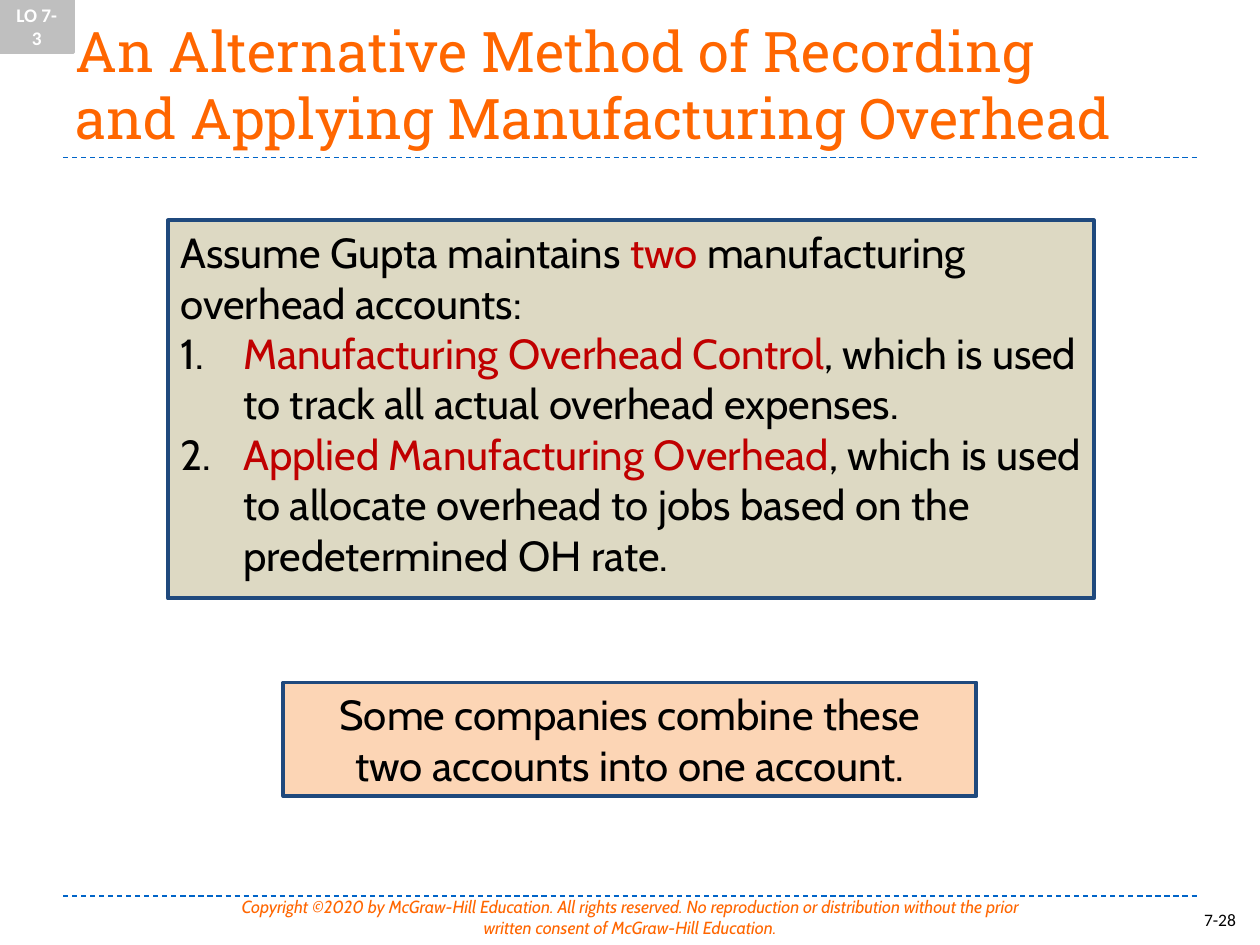
from dataclasses import dataclass

from lxml import etree
from pptx import Presentation
from pptx.dml.color import RGBColor
from pptx.enum.dml import MSO_LINE
from pptx.enum.shapes import MSO_CONNECTOR, MSO_SHAPE
from pptx.enum.text import MSO_ANCHOR, MSO_AUTO_SIZE, PP_ALIGN
from pptx.oxml.ns import qn
from pptx.slide import Slide
from pptx.util import Pt

LEFT, CENTER = PP_ALIGN.LEFT, PP_ALIGN.CENTER
TOP, MIDDLE, BOTTOM = MSO_ANCHOR.TOP, MSO_ANCHOR.MIDDLE, MSO_ANCHOR.BOTTOM
RECTANGLE, STRAIGHT, DASH = MSO_SHAPE.RECTANGLE, MSO_CONNECTOR.STRAIGHT, MSO_LINE.DASH
NO_AUTOFIT = MSO_AUTO_SIZE.NONE

ORANGE = RGBColor(0xFF, 0x66, 0x00)
BLUE = RGBColor(0x00, 0x64, 0xC8)
NAVY = RGBColor(0x1F, 0x49, 0x7D)
TAN = RGBColor(0xDD, 0xD9, 0xC3)
PEACH = RGBColor(0xFC, 0xD5, 0xB5)
GRAY = RGBColor(0xBF, 0xBF, 0xBF)
RED = RGBColor(0xC0, 0x00, 0x00)
BLACK = RGBColor(0x00, 0x00, 0x00)
WHITE = RGBColor(0xFF, 0xFF, 0xFF)


@dataclass
class SlideBuilder:
    slide: Slide
    body_font: str = "Cabin"
    title_font: str = "Roboto Slab"
    label_font: str = "Calibri"
    body_size: int = 24
    number_indent: int = 36

    def format_font(self, font, name, size, color, bold=False, italic=False):
        font.name, font.size = name, Pt(size)
        font.bold, font.italic = bold, italic
        font.color.rgb = color

    def title(self, text, left, top, width, height):
        title = self.slide.shapes.title
        title.left, title.top = Pt(left), Pt(top)
        title.width, title.height = Pt(width), Pt(height)
        frame = title.text_frame
        frame.auto_size, frame.vertical_anchor = NO_AUTOFIT, BOTTOM
        para = frame.paragraphs[0]
        para.text, para.alignment = text, LEFT
        for span in para.runs:
            self.format_font(span.font, self.title_font, 32, ORANGE)

    def rule(self, left, right, y):
        line = self.slide.shapes.add_connector(STRAIGHT, Pt(left), Pt(y), Pt(right), Pt(y))
        line.line.color.rgb, line.line.width = BLUE, Pt(0.75)
        line.line.dash_style = DASH
        etree.SubElement(line._element.spPr, qn("a:effectLst"))

    def text(self, text, left, top, width, height, font, color, align=LEFT, italic=False):
        box = self.slide.shapes.add_textbox(Pt(left), Pt(top), Pt(width), Pt(height))
        box.text_frame.word_wrap = True
        para = box.text_frame.paragraphs[0]
        para.text, para.alignment = text, align
        self.format_font(para.runs[0].font, font, 10, color, italic=italic)

    def panel(self, left, top, width, height, fill, outline, weight, anchor=TOP, wrap=False):
        box = self.slide.shapes.add_shape(RECTANGLE, Pt(left), Pt(top), Pt(width), Pt(height))
        box.shadow.inherit = False
        box.fill.solid()
        box.fill.fore_color.rgb = fill
        box.line.color.rgb, box.line.width = outline, Pt(weight)
        box.text_frame.word_wrap, box.text_frame.vertical_anchor = wrap, anchor
        return box.text_frame

    def number(self, para):
        properties = para._p.get_or_add_pPr()
        properties.set("marL", str(Pt(self.number_indent)))
        properties.set("indent", str(-Pt(self.number_indent)))
        color = etree.SubElement(properties, qn("a:buClr"))
        etree.SubElement(color, qn("a:srgbClr"), val=str(BLACK))
        etree.SubElement(properties, qn("a:buFont"), typeface="+mj-lt")
        etree.SubElement(properties, qn("a:buAutoNum"), type="arabicPeriod")

    def body(self, frame, paragraphs, align=LEFT):
        """Each paragraph is (numbered, [(text, color), ...])."""
        for index, (numbered, parts) in enumerate(paragraphs):
            para = frame.add_paragraph() if index else frame.paragraphs[0]
            para.alignment = align
            if numbered:
                self.number(para)
            for text, color in parts:
                for line_index, line in enumerate(text.split("\n")):
                    if line_index:
                        para.add_line_break()
                    span = para.add_run()
                    span.text = line
                    self.format_font(span.font, self.body_font, self.body_size, color)

    def tag(self, text, left, top, width, height):
        frame = self.panel(left, top, width, height, GRAY, GRAY, 1.5, MIDDLE, wrap=True)
        para = frame.paragraphs[0]
        para.text, para.alignment = text, CENTER
        self.format_font(para.runs[0].font, self.label_font, 11, WHITE, bold=True)


def main():
    deck = Presentation()
    deck.slide_width, deck.slide_height = Pt(720), Pt(540)
    page = SlideBuilder(deck.slides.add_slide(deck.slide_layouts[5]))

    # Rules and footer
    for y in (512, 90):
        page.rule(36, 684, y)
    page.text("Copyright ©2020 by McGraw-Hill Education. All rights reserved. "
              "No reproduction or distribution without the prior written consent "
              "of McGraw-Hill Education.",
              120, 508.5, 480, 31.5, page.body_font, ORANGE, CENTER, italic=True)
    page.text("7-28", 681, 516, 36, 18, page.label_font, BLACK)

    # Title
    page.title("An Alternative Method of Recording\nand Applying Manufacturing Overhead",
               36, 18, 648, 72)

    # The two overhead accounts
    accounts = page.panel(96, 126, 529, 216, TAN, NAVY, 2.25)
    page.body(accounts, [
        (False, [("Assume Gupta maintains ", BLACK), ("two", RED), (" manufacturing", BLACK)]),
        (False, [("overhead accounts:", BLACK)]),
        (True, [("Manufacturing Overhead Control", RED),
                (", which is used\nto track all actual overhead expenses.", BLACK)]),
        (True, [("Applied Manufacturing Overhead", RED),
                (", which is used\nto allocate overhead to jobs based on the\n"
                 "predetermined OH rate.", BLACK)]),
    ])

    # Closing remark
    remark = page.panel(162, 390, 396, 65, PEACH, NAVY, 2.25)
    page.body(remark, [
        (False, [("Some companies combine these\ntwo accounts into one account.", BLACK)]),
    ], CENTER)

    # Learning objective tag
    page.tag("LO 7-3", 0, 0, 42, 30)

    deck.save("out.pptx")


if __name__ == "__main__":
    main()
